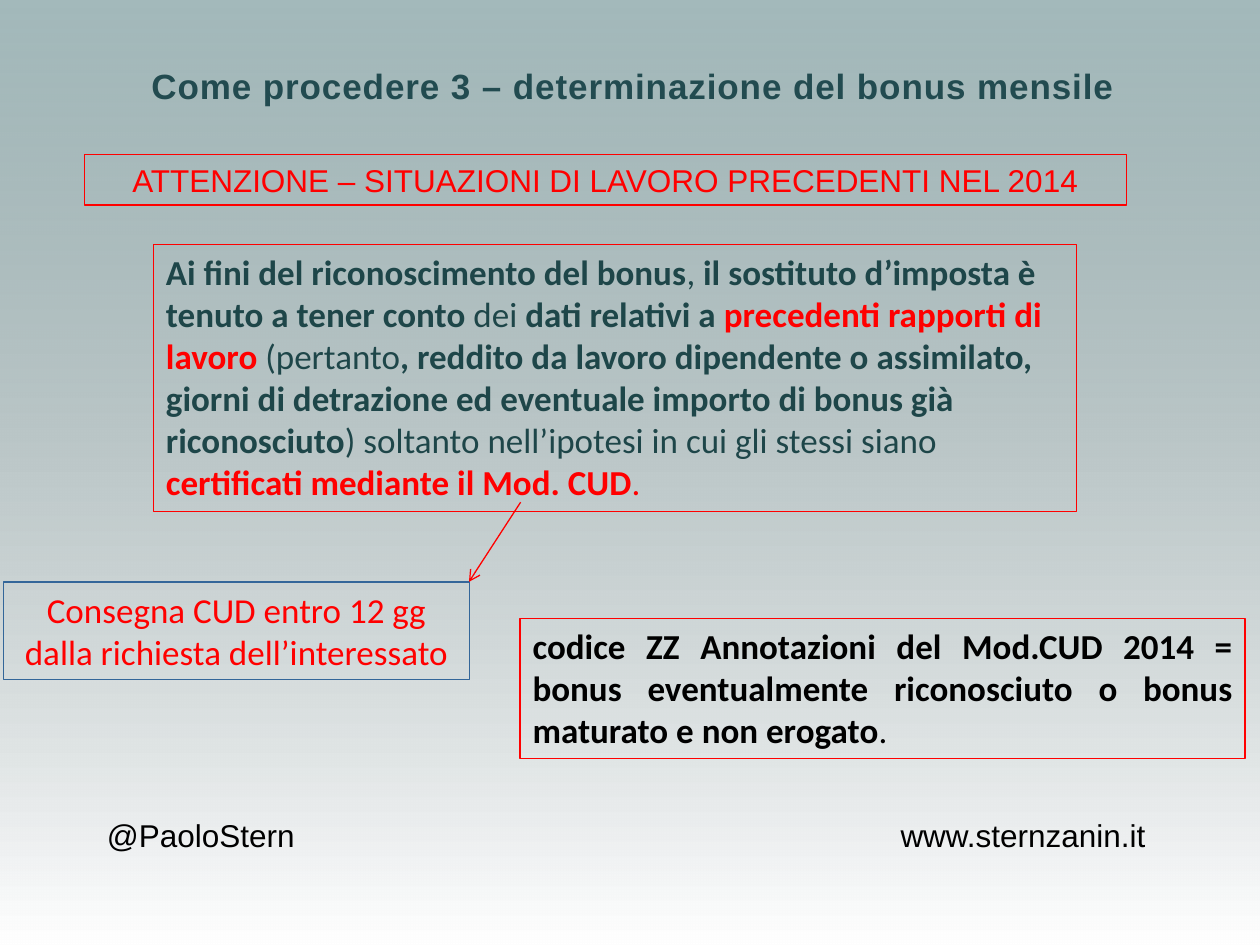
"""Build the slide on determining the monthly bonus after earlier jobs in 2014."""
import pptx
import pptx.util
import pptx.dml.color
import pptx.enum.shapes
import pptx.enum.text
import pptx.oxml
import pptx.oxml.ns

Pt = pptx.util.Pt
RGBColor = pptx.dml.color.RGBColor
ALIGN = pptx.enum.text.PP_ALIGN
qn = pptx.oxml.ns.qn

RED = RGBColor(0xFF, 0x00, 0x00)
BLACK = RGBColor(0x00, 0x00, 0x00)
WHITE = RGBColor(0xFF, 0xFF, 0xFF)
GREY = RGBColor(0x80, 0x80, 0x80)
BLUE = RGBColor(0x33, 0x66, 0x99)
TEAL = RGBColor(0x1E, 0x46, 0x49)
TITLE_TEAL = RGBColor(0x22, 0x4B, 0x50)
PALE_TEAL = RGBColor(0xBB, 0xE0, 0xE3)


def place(shape, left, top, width, height):
    shape.left, shape.top = Pt(left), Pt(top)
    shape.width, shape.height = Pt(width), Pt(height)


def write(shape, runs, font_name, size, align):
    frame = shape.text_frame
    frame.word_wrap = True
    frame.vertical_anchor = pptx.enum.text.MSO_ANCHOR.TOP
    paragraph = frame.paragraphs[0]
    paragraph.alignment = align
    paragraph.font.name = font_name
    paragraph.font.size = Pt(size)
    same_color = len({color for _, color, _ in runs}) == 1
    same_bold = len({bold for _, _, bold in runs}) == 1
    if same_color:
        paragraph.font.color.rgb = runs[0][1]
    if same_bold:
        paragraph.font.bold = runs[0][2]
    for text, color, bold in runs:
        run = paragraph.add_run()
        run.text = text
        if not same_color:
            run.font.color.rgb = color
        if not same_bold:
            run.font.bold = bold


presentation = pptx.Presentation()
presentation.slide_width, presentation.slide_height = Pt(720), Pt(540)
slide = presentation.slides.add_slide(presentation.slide_layouts[5])
slide.background.fill.solid()
slide.background.fill.fore_color.rgb = PALE_TEAL

backdrop = slide.shapes.add_shape(
    pptx.enum.shapes.MSO_SHAPE.RECTANGLE, 0, 0, Pt(720), Pt(540))
backdrop.shadow.inherit = False
backdrop.line.fill.background()
backdrop.fill.gradient()
backdrop.fill.gradient_angle = 270
for stop, color, position in zip(backdrop.fill.gradient_stops, (GREY, WHITE), (0, 1)):
    stop.color.rgb = color
    stop.position = position
grey_stop = next(backdrop._element.spPr.iter(qn("a:srgbClr")))
grey_stop.append(pptx.oxml.parse_xml(
    f'<a:alpha {pptx.oxml.ns.nsdecls("a")} val="40000"/>'))
slide.shapes._spTree.insert(2, backdrop._element)

title = slide.shapes.title
place(title, 1.5, 33, 720, 31.5)
write(title, [("Come procedere 3 – determinazione del bonus mensile", TITLE_TEAL, True)],
      "Arial", 20, ALIGN.CENTER)
title.text_frame.paragraphs[0].runs[0]._r.get_or_add_rPr().set("spc", "50")

rule = [
    ("Ai fini del riconoscimento del bonus", TEAL, True),
    (", ", TEAL, False),
    ("il sostituto d’imposta è tenuto a tener conto ", TEAL, True),
    ("dei ", TEAL, False),
    ("dati relativi a ", TEAL, True),
    ("precedenti rapporti di lavoro ", RED, True),
    ("(pertanto", TEAL, False),
    (", reddito da lavoro dipendente o assimilato, giorni di detrazione ed "
     "eventuale importo di bonus già riconosciuto", TEAL, True),
    (") soltanto nell’ipotesi in cui gli stessi siano ", TEAL, False),
    ("certificati mediante il Mod. CUD", RED, True),
    (".", RED, False),
]
warning = [("ATTENZIONE – SITUAZIONI DI LAVORO PRECEDENTI NEL 2014", RED, False)]
deadline = [("Consegna CUD entro 12 gg dalla richiesta dell’interessato", RED, False)]
code_zz = [
    ("codice ZZ Annotazioni del Mod.CUD 2014 = bonus eventualmente riconosciuto "
     "o bonus maturato e non erogato", BLACK, True),
    (".", BLACK, False),
]
handle = [("@PaoloStern", BLACK, False)]
website = [("www.sternzanin.it", BLACK, False)]

for runs, box, font_name, size, align, border in (
    (handle, (54, 463, 130.5, 29), "Arial", 18, ALIGN.LEFT, None),
    (website, (507.5, 463, 175.5, 29), "Arial", 18, ALIGN.LEFT, None),
    (rule, (87.75, 139.75, 527.25, 152.5), "Calibri", 20, ALIGN.LEFT, RED),
    (warning, (48.25, 88.25, 595.5, 29), "Arial", 18, ALIGN.CENTER, RED),
    (deadline, (2, 332.5, 266.25, 55.75), "Calibri", 20, ALIGN.CENTER, BLUE),
    (code_zz, (297.25, 353.5, 414.25, 80), "Calibri", 20, ALIGN.JUSTIFY, RED),
):
    note = slide.shapes.add_textbox(*(Pt(length) for length in box))
    write(note, runs, font_name, size, align)
    if border:
        note.line.color.rgb = border
        note.line.width = Pt(0.75)

arrow = slide.shapes.add_connector(
    pptx.enum.shapes.MSO_CONNECTOR.STRAIGHT, Pt(297.5), Pt(287), Pt(268), Pt(332.5))
arrow.line.color.rgb = RED
arrow.line.width = Pt(0.75)
arrow.line._get_or_add_ln().append(pptx.oxml.parse_xml(
    f'<a:tailEnd {pptx.oxml.ns.nsdecls("a")} type="arrow"/>'))
arrow._element.spPr.append(pptx.oxml.parse_xml(
    f'<a:effectLst {pptx.oxml.ns.nsdecls("a")}/>'))

presentation.save("out.pptx")
